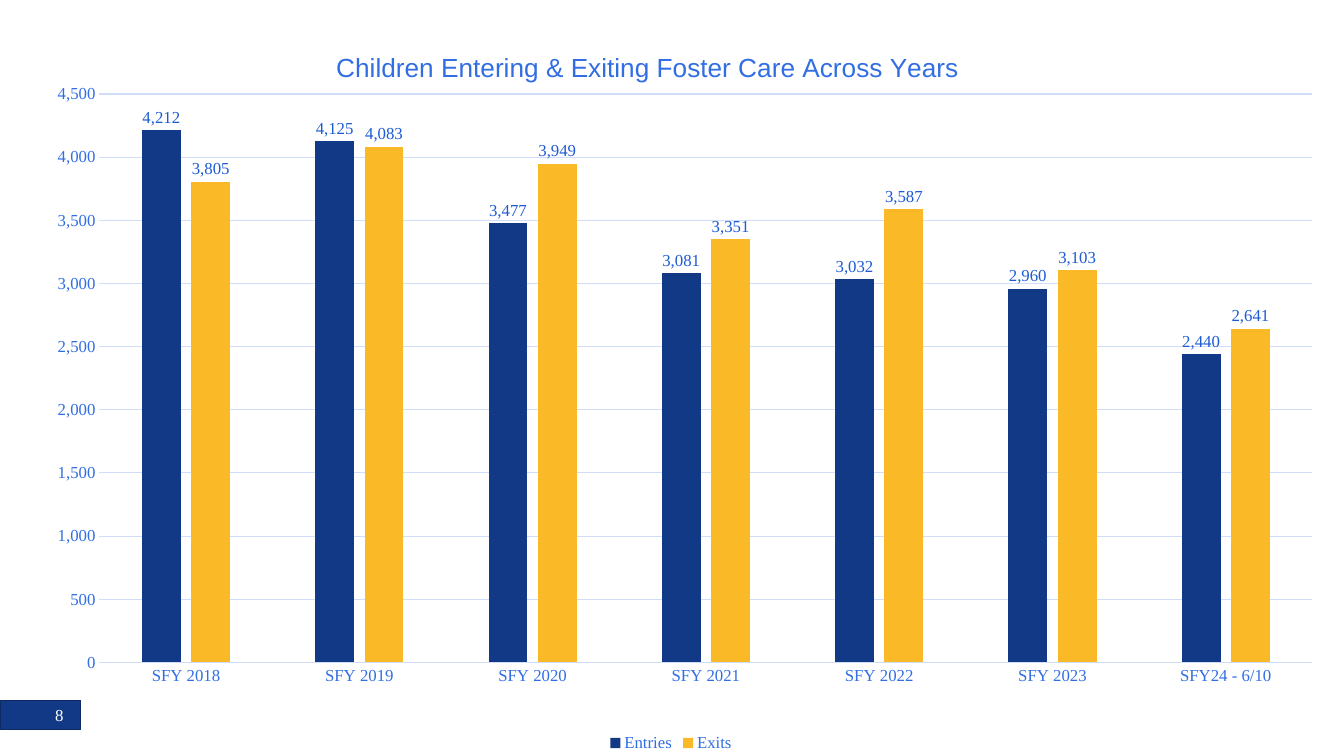
import pptx
import pptx.chart.data
import pptx.dml.color
import pptx.enum.chart
import pptx.enum.shapes
import pptx.enum.text
import pptx.oxml
import pptx.util
from pptx.util import Cm, Pt

RGBColor = pptx.dml.color.RGBColor
NAVY = RGBColor(0x12, 0x39, 0x85)
DARK_NAVY = RGBColor(0x0D, 0x2A, 0x62)
GOLD = RGBColor(0xFA, 0xB9, 0x27)
AXIS_BLUE = RGBColor(0x31, 0x6E, 0xE3)
LABEL_BLUE = RGBColor(0x1D, 0x5B, 0xD4)
PALE_BLUE = RGBColor(0xD0, 0xDD, 0xF9)
WHITE = RGBColor(0xFF, 0xFF, 0xFF)

YEARS = ["SFY 2018", "SFY 2019", "SFY 2020", "SFY 2021", "SFY 2022", "SFY 2023", "SFY24 - 6/10"]
SERIES = [
    ("Entries", NAVY, [4212, 4125, 3477, 3081, 3032, 2960, 2440]),
    ("Exits", GOLD, [3805, 4083, 3949, 3351, 3587, 3103, 2641]),
]


class SlideBuilder:
    body_font = "Times New Roman"
    title_font = "Arial"
    body_size = Pt(12)
    title_size = Pt(18.7)
    number_format = "#,##0"

    def __init__(self, slide):
        self.slide = slide

    def style_font(self, font, color, size=None, name=None):
        font.size = size or self.body_size
        font.name = name or self.body_font
        font.color.rgb = color
        font.bold = False

    def style_line(self, line, color, width):
        line.color.rgb = color
        line.width = width

    def add_rectangle(self, left, top, width, height, fill, outline):
        shape = self.slide.shapes.add_shape(
            pptx.enum.shapes.MSO_SHAPE.RECTANGLE, left, top, width, height)
        shape.shadow.inherit = False
        shape.fill.solid()
        shape.fill.fore_color.rgb = fill
        self.style_line(shape.line, outline, Pt(0.85))

    def add_text(self, left, top, width, height, text, color):
        text_frame = self.slide.shapes.add_textbox(left, top, width, height).text_frame
        text_frame.word_wrap = True
        text_frame.vertical_anchor = pptx.enum.text.MSO_ANCHOR.MIDDLE
        text_frame.text = text
        paragraph = text_frame.paragraphs[0]
        paragraph.alignment = pptx.enum.text.PP_ALIGN.RIGHT
        self.style_font(paragraph.runs[0].font, color)

    def set_layout(self, parent, position, **values):
        """Place a chart part by fractions of the chart area."""
        namespace = "http://schemas.openxmlformats.org/drawingml/2006/chart"
        settings = "".join(f'<c:{tag} val="{value}"/>' for tag, value in values.items())
        for old_layout in parent.findall(f"{{{namespace}}}layout"):
            parent.remove(old_layout)
        parent.insert(position, pptx.oxml.parse_xml(
            f'<c:layout xmlns:c="{namespace}"><c:manualLayout>{settings}</c:manualLayout></c:layout>'))

    def add_column_chart(self, left, top, width, height, title, categories, series_list):
        data = pptx.chart.data.CategoryChartData(number_format=self.number_format)
        data.categories = categories
        for name, _, values in series_list:
            data.add_series(name, values)
        chart = self.slide.shapes.add_chart(
            pptx.enum.chart.XL_CHART_TYPE.COLUMN_CLUSTERED, left, top, width, height, data).chart
        self.style_font(chart.font, NAVY, Pt(10))

        # Title
        chart.has_title = True
        chart.chart_title.include_in_layout = False
        title_frame = chart.chart_title.text_frame
        title_frame.text = title
        self.style_font(title_frame.paragraphs[0].runs[0].font, AXIS_BLUE,
                        self.title_size, self.title_font)
        self.set_layout(chart.chart_title._element, 1,
                        xMode="edge", yMode="edge", x=0.238, y=0.027)

        # Columns and value labels
        plot = chart.plots[0]
        plot.gap_width = 219
        plot.overlap = -27
        plot.vary_by_categories = False
        for series, (_, color, _) in zip(plot.series, series_list):
            series.format.fill.solid()
            series.format.fill.fore_color.rgb = color
            series.invert_if_negative = False
            labels = series.data_labels
            labels.show_value = True
            labels.position = pptx.enum.chart.XL_LABEL_POSITION.OUTSIDE_END
            labels.number_format = self.number_format
            labels.number_format_is_linked = False
            self.style_font(labels.font, LABEL_BLUE)
        self.set_layout(chart._chartSpace.chart.plotArea, 0, layoutTarget="inner",
                        xMode="edge", yMode="edge", x=0.059, y=0.093, w=0.936, h=0.779)

        # Axes
        for axis in (chart.category_axis, chart.value_axis):
            axis.major_tick_mark = pptx.enum.chart.XL_TICK_MARK.NONE
            axis.minor_tick_mark = pptx.enum.chart.XL_TICK_MARK.NONE
            self.style_font(axis.tick_labels.font, AXIS_BLUE)
        self.style_line(chart.category_axis.format.line, PALE_BLUE, Pt(0.75))
        value_axis = chart.value_axis
        value_axis.minimum_scale = 0
        value_axis.maximum_scale = 4500
        value_axis.major_unit = 500
        value_axis.tick_labels.number_format = self.number_format
        value_axis.tick_labels.number_format_is_linked = False
        value_axis.format.line.fill.background()
        self.style_line(value_axis.major_gridlines.format.line, PALE_BLUE, Pt(0.75))

        # Legend
        chart.has_legend = True
        chart.legend.position = pptx.enum.chart.XL_LEGEND_POSITION.BOTTOM
        chart.legend.include_in_layout = False
        self.style_font(chart.legend.font, AXIS_BLUE)


def main():
    presentation = pptx.Presentation()
    presentation.slide_width = Cm(33.87)
    presentation.slide_height = Cm(19.05)
    builder = SlideBuilder(presentation.slides.add_slide(presentation.slide_layouts[6]))

    # Page number tab, chart, page number
    tab_top, tab_height = Cm(17.65), Cm(0.74)
    builder.add_rectangle(Cm(0), tab_top, Cm(2.03), tab_height, NAVY, DARK_NAVY)
    builder.add_column_chart(Cm(0.58), Cm(0.66), Cm(32.66), Cm(18.39),
                             "Children Entering & Exiting Foster Care Across Years", YEARS, SERIES)
    builder.add_text(Cm(0.58), tab_top, Cm(1.27), tab_height, "8", WHITE)

    presentation.save("out.pptx")


if __name__ == "__main__":
    main()
